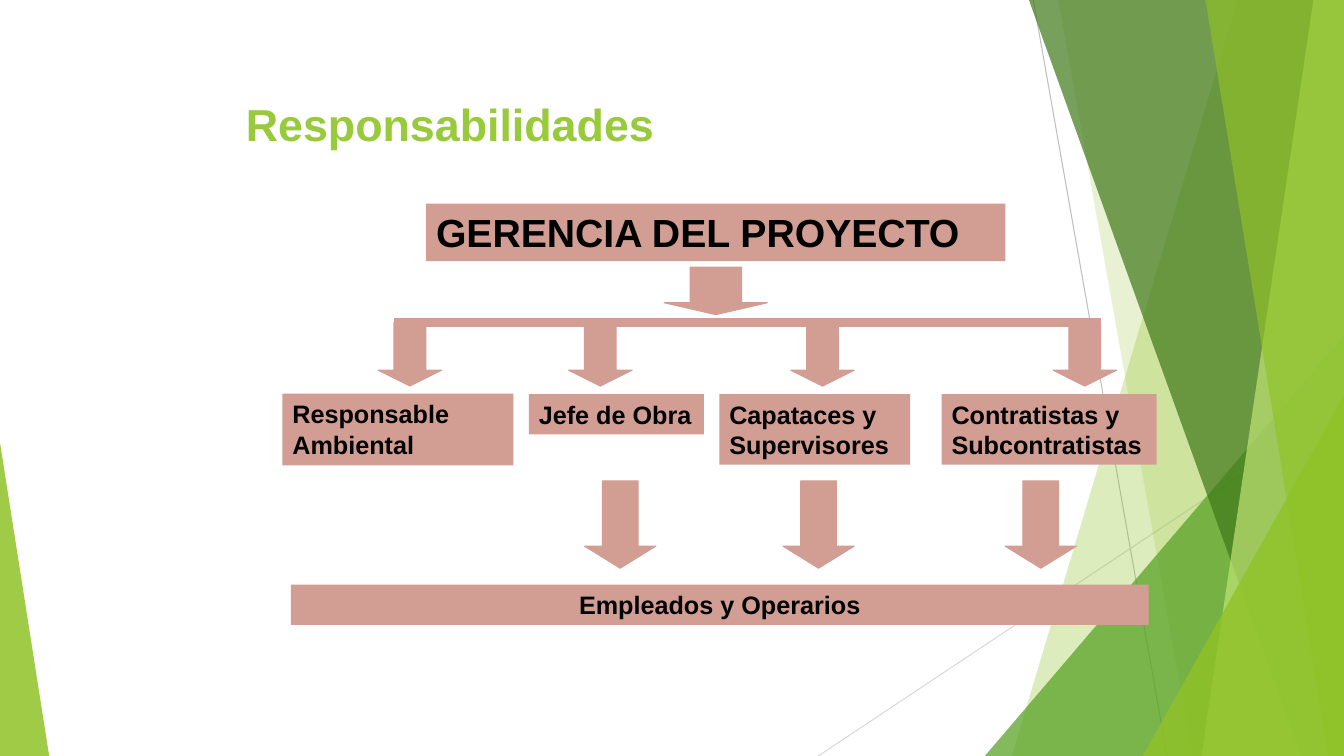
from lxml import etree
from pptx import Presentation
from pptx.dml.color import RGBColor
from pptx.enum import shapes, text
from pptx.oxml import ns
from pptx.util import Cm, Pt

ROSE = "D29E94"
GREEN = "90C226"
WIDE, HIGH = 33.87, 19.05


def tint(fill, hue):
    fill.solid()
    fill.fore_color.rgb = RGBColor.from_string(hue)


def write(shape, words, size=18, hue="000000", align=text.PP_ALIGN.LEFT):
    frame = shape.text_frame
    frame.word_wrap = True
    frame.auto_size = text.MSO_AUTO_SIZE.NONE
    frame.vertical_anchor = text.MSO_ANCHOR.TOP
    par = frame.paragraphs[0]
    par.alignment = align
    run = par.add_run()
    run.text = words
    run.font.name = "Arial"
    run.font.size = Pt(size)
    run.font.bold = True
    tint(run.font.fill, hue)


deck = Presentation()
deck.slide_width, deck.slide_height = Cm(WIDE), Cm(HIGH)
slide = deck.slides.add_slide(deck.slide_layouts[5])
tree = slide.shapes

title = tree.title
title.left, title.top, title.width, title.height = Cm(5.94), Cm(2.31), Cm(22.96), Cm(1.6)
write(title, "Responsabilidades", size=32, hue="99CA3C")

lines = [
    (26.04, 0, 29.41, HIGH, "BFBFBF", 0.75),
    (WIDE, 10.24, 20.62, HIGH, "D9D9D9", 0.75),
    (9.93, 8.13, 27.74, 8.13, ROSE, 6),
]
for x1, y1, x2, y2, hue, thick in lines:
    line = tree.add_connector(shapes.MSO_CONNECTOR.STRAIGHT, Cm(x1), Cm(y1), Cm(x2), Cm(y2))
    tint(line.line.fill, hue)
    line.line.width = Pt(thick)
    etree.SubElement(line._element.spPr, ns.qn("a:effectLst"))

panels = [
    ((31.19, 25.5), GREEN, 30),
    ((26.67, 30.05), GREEN, 20),
    ((24.82, 8.46, 9.05, 10.59, 1), "54A021", 72),
    ((25.93, 32.79), "3F7819", 70),
    ((33.1, 30.28), "C0E474", 70),
    ((30.38, 33.48), GREEN, 65),
    ((28.8, 9.98, 5.07, 9.07, 1), GREEN, 80),
    ((0, 11.15, 1.24, 7.9, 0), GREEN, 85),
]
for place, hue, alpha in panels:
    if len(place) == 2:
        top, base = place
        pen = tree.build_freeform(Cm(top), 0)
        pen.add_line_segments([(Cm(x), Cm(y)) for x, y in ((WIDE, 0), (WIDE, HIGH), (base, HIGH))])
        panel = pen.convert_to_shape()
    else:
        *box, tip = place
        panel = tree.add_shape(shapes.MSO_SHAPE.ISOSCELES_TRIANGLE, *map(Cm, box))
        panel.adjustments[0] = tip
    panel.shadow.inherit = False
    panel.line.fill.background()
    tint(panel.fill, hue)
    tone = panel._element.spPr.find(".//" + ns.qn("a:srgbClr"))
    etree.SubElement(tone, ns.qn("a:alpha"), val=str(alpha * 1000))

boxes = [
    ("GERENCIA DEL PROYECTO", 10.74, 5.13, 14.6, 1.45, {"size": 28}),
    ("Responsable Ambiental", 7.12, 9.92, 5.82, 1.81, {}),
    ("Jefe de Obra", 13.33, 9.93, 4.41, 1.02, {}),
    ("Capataces y Supervisores", 18.13, 9.93, 4.81, 1.78, {}),
    ("Contratistas y Subcontratistas", 23.73, 9.93, 5.42, 1.78, {}),
    ("Empleados y Operarios", 7.33, 14.73, 21.62, 1.02, {"align": text.PP_ALIGN.CENTER}),
]
for words, x, y, w, h, style in boxes:
    box = tree.add_shape(shapes.MSO_SHAPE.RECTANGLE, Cm(x), Cm(y), Cm(w), Cm(h))
    box.shadow.inherit = False
    tint(box.fill, ROSE)
    box.line.fill.background()
    write(box, words, **style)

rows = [
    ([16.74], 6.73, 2.6, 1.2, 0.25),
    ([9.53, 14.33, 19.93, 26.54], 8.13, 1.6, 1.6, 0.25),
    ([14.73, 19.73, 25.33], 12.12, 1.8, 2.2, 0.31),
]
for lefts, y, w, h, head in rows:
    for x in lefts:
        arrow = tree.add_shape(shapes.MSO_SHAPE.DOWN_ARROW, Cm(x), Cm(y), Cm(w), Cm(h))
        arrow.adjustments[1] = head
        arrow.shadow.inherit = False
        tint(arrow.fill, ROSE)
        tint(arrow.line.fill, ROSE)
        arrow.line.width = Pt(0.75)

deck.save("out.pptx")
